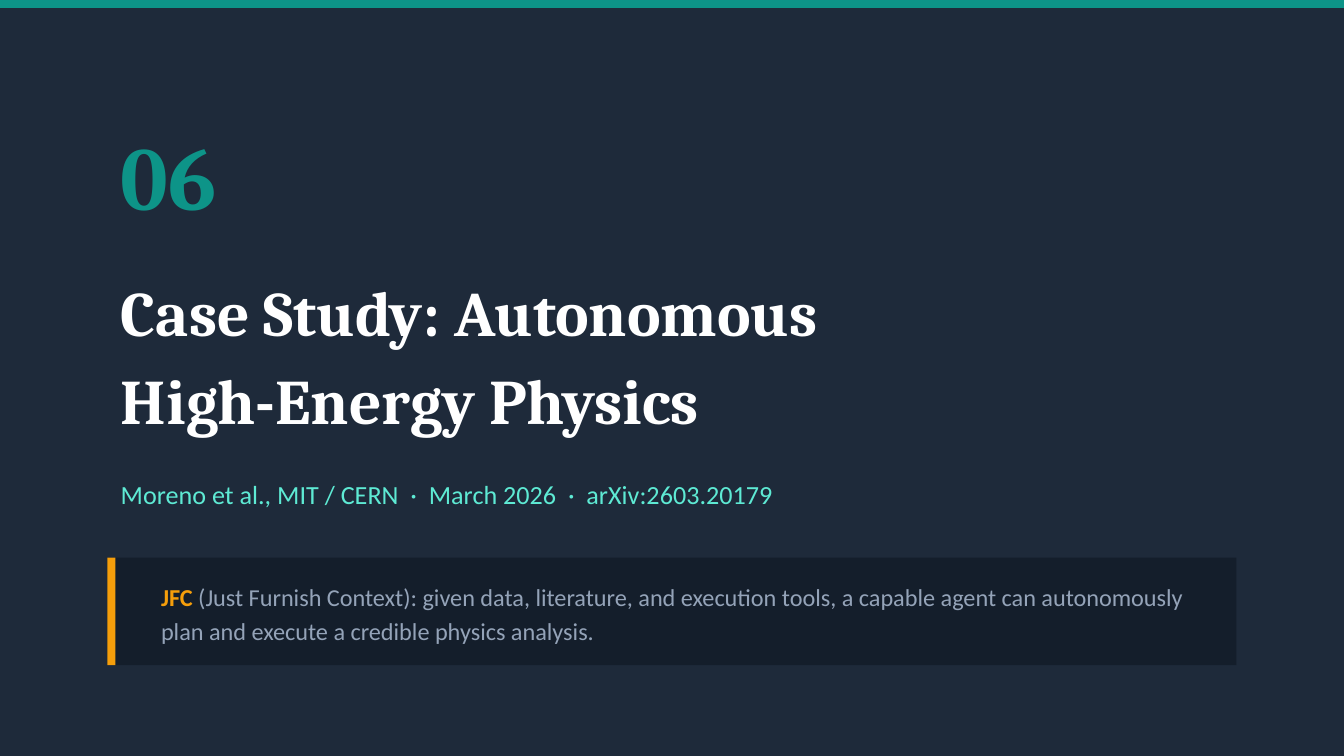
"""Build the section slide for the high-energy physics case study."""
from dataclasses import dataclass

import pptx
import pptx.dml.color
import pptx.enum.shapes
import pptx.enum.text
import pptx.slide
import pptx.text.text
import pptx.util

RGBColor = pptx.dml.color.RGBColor
NAVY = RGBColor(0x1E, 0x2A, 0x3A)
INK = RGBColor(0x14, 0x1E, 0x2B)
TEAL = RGBColor(0x0D, 0x94, 0x88)
MINT = RGBColor(0x5E, 0xEA, 0xD4)
AMBER = RGBColor(0xF5, 0x9E, 0x0B)
SLATE = RGBColor(0x94, 0xA3, 0xB8)
WHITE = RGBColor(0xFF, 0xFF, 0xFF)

EMU_PER_PX = 4572
PAGE_WIDTH, PAGE_HEIGHT = 2000, 1125
MARGIN = 160
ACCENT = 12
CALLOUT_TOP, CALLOUT_HEIGHT = 830, 160


@dataclass(frozen=True)
class Area:
    """A rectangle in px."""

    left: int
    top: int
    width: int
    height: int

    def emu(self) -> tuple[int, ...]:
        """Return the four lengths in EMU."""
        lengths = (self.left, self.top, self.width, self.height)
        return tuple(pptx.util.Emu(length * EMU_PER_PX) for length in lengths)


@dataclass(frozen=True)
class Style:
    """The look of a block of text."""

    font: str
    size: int
    color: RGBColor
    bold: bool = False
    spacing: float = 1.0


@dataclass(frozen=True)
class Bar:
    """A plain filled rectangle."""

    area: Area
    color: RGBColor


BARS = (
    Bar(Area(0, 0, PAGE_WIDTH, ACCENT), TEAL),
    Bar(Area(MARGIN, CALLOUT_TOP, PAGE_WIDTH - 2 * MARGIN, CALLOUT_HEIGHT), INK),
    Bar(Area(MARGIN, CALLOUT_TOP, ACCENT, CALLOUT_HEIGHT), AMBER),
)


def draw_bar(page: pptx.slide.Slide, bar: Bar) -> None:
    """Draw a rectangle without outline or shadow."""
    shape = page.shapes.add_shape(
        pptx.enum.shapes.MSO_SHAPE.RECTANGLE, *bar.area.emu()
    )
    shape.shadow.inherit = False
    shape.fill.solid()
    shape.fill.fore_color.rgb = bar.color
    shape.line.fill.background()


def write_text(frame: pptx.text.text.TextFrame, text: str, style: Style) -> None:
    """Fill a frame with left-aligned, vertically centred paragraphs."""
    frame.text = text
    frame.word_wrap = True
    frame.auto_size = pptx.enum.text.MSO_AUTO_SIZE.NONE
    frame.vertical_anchor = pptx.enum.text.MSO_ANCHOR.MIDDLE
    for para in frame.paragraphs:
        para.alignment = pptx.enum.text.PP_ALIGN.LEFT
        para.line_spacing = style.spacing
        para.font.name = style.font
        para.font.size = pptx.util.Pt(style.size)
        para.font.bold = style.bold
        para.font.color.rgb = style.color


def add_text(
    page: pptx.slide.Slide, area: Area, text: str, style: Style
) -> pptx.text.text.TextFrame:
    """Add a text box and return its frame."""
    frame = page.shapes.add_textbox(*area.emu()).text_frame
    write_text(frame, text, style)
    return frame


def main() -> None:
    """Build and save the deck."""
    deck = pptx.Presentation()
    deck.slide_width = pptx.util.Emu(PAGE_WIDTH * EMU_PER_PX)
    deck.slide_height = pptx.util.Emu(PAGE_HEIGHT * EMU_PER_PX)
    page = deck.slides.add_slide(deck.slide_layouts.get_by_name("Title Only"))
    page.background.fill.solid()
    page.background.fill.fore_color.rgb = NAVY

    for bar in BARS:
        draw_bar(page, bar)

    title = page.shapes.title
    title.left, title.top, title.width, title.height = Area(
        MARGIN, 360, 1600, 320
    ).emu()
    write_text(
        title.text_frame,
        "Case Study: Autonomous\nHigh-Energy Physics",
        Style("Cambria", 34, WHITE, bold=True, spacing=1.15),
    )

    add_text(
        page,
        Area(MARGIN, 160, 300, 200),
        "06",
        Style("Cambria", 48, TEAL, bold=True),
    )
    add_text(
        page,
        Area(MARGIN, 690, 1600, 90),
        "Moreno et al., MIT / CERN  ·  March 2026  ·  arXiv:2603.20179",
        Style("Calibri", 14, MINT),
    )
    callout = add_text(
        page,
        Area(220, CALLOUT_TOP, 1560, CALLOUT_HEIGHT),
        "JFC ",
        Style("Calibri", 13, SLATE, spacing=1.15),
    )
    para = callout.paragraphs[0]
    acronym = para.runs[0]
    acronym.font.bold = True
    acronym.font.color.rgb = AMBER
    span = para.add_run()
    span.text = (
        "(Just Furnish Context): given data, literature, and execution tools, "
        "a capable agent can autonomously plan and execute a credible "
        "physics analysis."
    )

    deck.save("out.pptx")


if __name__ == "__main__":
    main()
